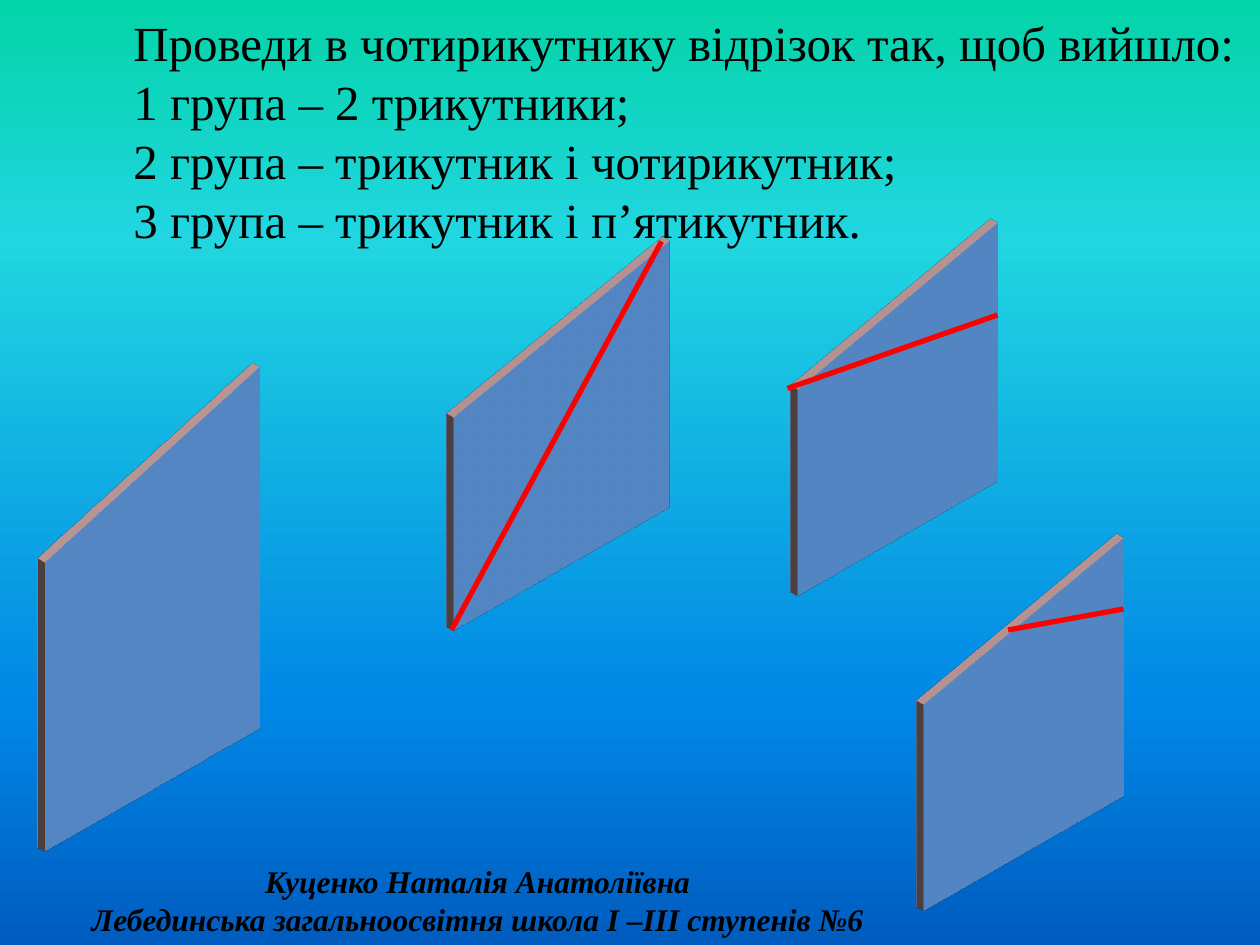
from lxml import etree
from pptx import Presentation
from pptx.dml.color import RGBColor
from pptx.enum.shapes import MSO_CONNECTOR, MSO_SHAPE
from pptx.enum.text import MSO_ANCHOR, MSO_AUTO_SIZE, PP_ALIGN
from pptx.oxml.ns import qn
from pptx.util import Pt

QUADRILATERAL = MSO_SHAPE.FLOWCHART_MANUAL_INPUT
STRAIGHT = MSO_CONNECTOR.STRAIGHT
LEFT, CENTER = PP_ALIGN.LEFT, PP_ALIGN.CENTER
TOP = MSO_ANCHOR.TOP
NO_AUTOFIT = MSO_AUTO_SIZE.NONE
TITLE_ONLY = 5

TASK = [
    "Проведи в чотирикутнику відрізок так, щоб вийшло:",
    "1 група – 2 трикутники;",
    "2 група – трикутник і чотирикутник;",
    "3 група – трикутник і п’ятикутник.",
]
AUTHOR = [
    "Куценко Наталія Анатоліївна",
    "Лебединська загальноосвітня школа І –ІІІ ступенів №6",
]
TASK_AREA = (69, 0, 651, 165)
AUTHOR_AREA = (24, 489, 498, 51)

# Each figure: its area (left, top, width, height), then its cut (x1, y1, x2, y2)
FIGURES = [
    ((0, 222, 174, 252), None),
    ((234, 156, 174, 186), (258, 360, 378, 138)),
    ((432, 144, 162, 180), (450, 222, 570, 180)),
    ((504, 324, 162, 180), (576, 360, 642, 348)),
]

THEME = {
    "sky": [(0, "03D4A8"), (25, "21D6E0"), (75, "0087E6"), (100, "005CBF")],
    "face": RGBColor.from_string("4F81BD"),
    "edge": RGBColor.from_string("3A5F8C"),
    "side": "E6B9B8",
    "cut": RGBColor.from_string("FF0000"),
    "ink": RGBColor.from_string("000000"),
    "edge_width": Pt(5),
    "cut_width": Pt(3),
    "depth": Pt(6),
    "task": {"name": "Times New Roman", "size": Pt(28), "bold": False},
    "author": {"name": "Times New Roman", "size": Pt(18), "bold": True, "italic": True},
}


def points(values):
    return [Pt(value) for value in values]


def add_node(parent, tag, **attributes):
    return etree.SubElement(parent, qn(tag), attributes)


def paint_background(slide):
    fill = slide.background.fill
    fill.gradient()
    fill.gradient_angle = 270
    stops = slide.element.find(".//" + qn("a:gsLst"))
    for stop in list(stops):
        stops.remove(stop)
    for percent, color in THEME["sky"]:
        stop = add_node(stops, "a:gs", pos=str(percent * 1000))
        add_node(stop, "a:srgbClr", val=color)


def write_lines(box, lines, style, align):
    frame = box.text_frame
    frame_format = {"word_wrap": True, "auto_size": NO_AUTOFIT, "vertical_anchor": TOP}
    for name, value in frame_format.items():
        setattr(frame, name, value)
    for index, line in enumerate(lines):
        para = frame.add_paragraph() if index else frame.paragraphs[0]
        para.alignment = align
        span = para.add_run()
        span.text = line
        for name, value in style.items():
            setattr(span.font, name, value)
        span.font.color.rgb = THEME["ink"]
    return frame


def extrude(shape):
    """Turn the shape into a thin plate in isometric view."""
    properties = shape.element.spPr
    scene = add_node(properties, "a:scene3d")
    add_node(scene, "a:camera", prst="isometricRightUp")
    add_node(scene, "a:lightRig", rig="threePt", dir="t")
    plate = add_node(properties, "a:sp3d", extrusionH=str(int(THEME["depth"])))
    add_node(add_node(plate, "a:extrusionClr"), "a:srgbClr", val=THEME["side"])


def add_plate(slide, area):
    plate = slide.shapes.add_shape(QUADRILATERAL, *points(area))
    plate.shadow.inherit = False
    plate.fill.solid()
    plate.fill.fore_color.rgb = THEME["face"]
    plate.line.color.rgb = THEME["edge"]
    plate.line.width = THEME["edge_width"]
    extrude(plate)


def add_cut(slide, ends):
    cut = slide.shapes.add_connector(STRAIGHT, *points(ends))
    cut.line.color.rgb = THEME["cut"]
    cut.line.width = THEME["cut_width"]
    add_node(cut.element.spPr, "a:effectLst")


def main():
    deck = Presentation()
    deck.slide_width, deck.slide_height = Pt(720), Pt(540)
    slide = deck.slides.add_slide(deck.slide_layouts[TITLE_ONLY])
    paint_background(slide)

    title = slide.shapes.title
    title.left, title.top, title.width, title.height = points(TASK_AREA)
    frame = write_lines(title, TASK, THEME["task"], LEFT)
    frame.margin_top = Pt(7.2)

    for area, cut in FIGURES:
        add_plate(slide, area)
        if cut:
            add_cut(slide, cut)

    author_box = slide.shapes.add_textbox(*points(AUTHOR_AREA))
    write_lines(author_box, AUTHOR, THEME["author"], CENTER)
    deck.save("out.pptx")


if __name__ == "__main__":
    main()
